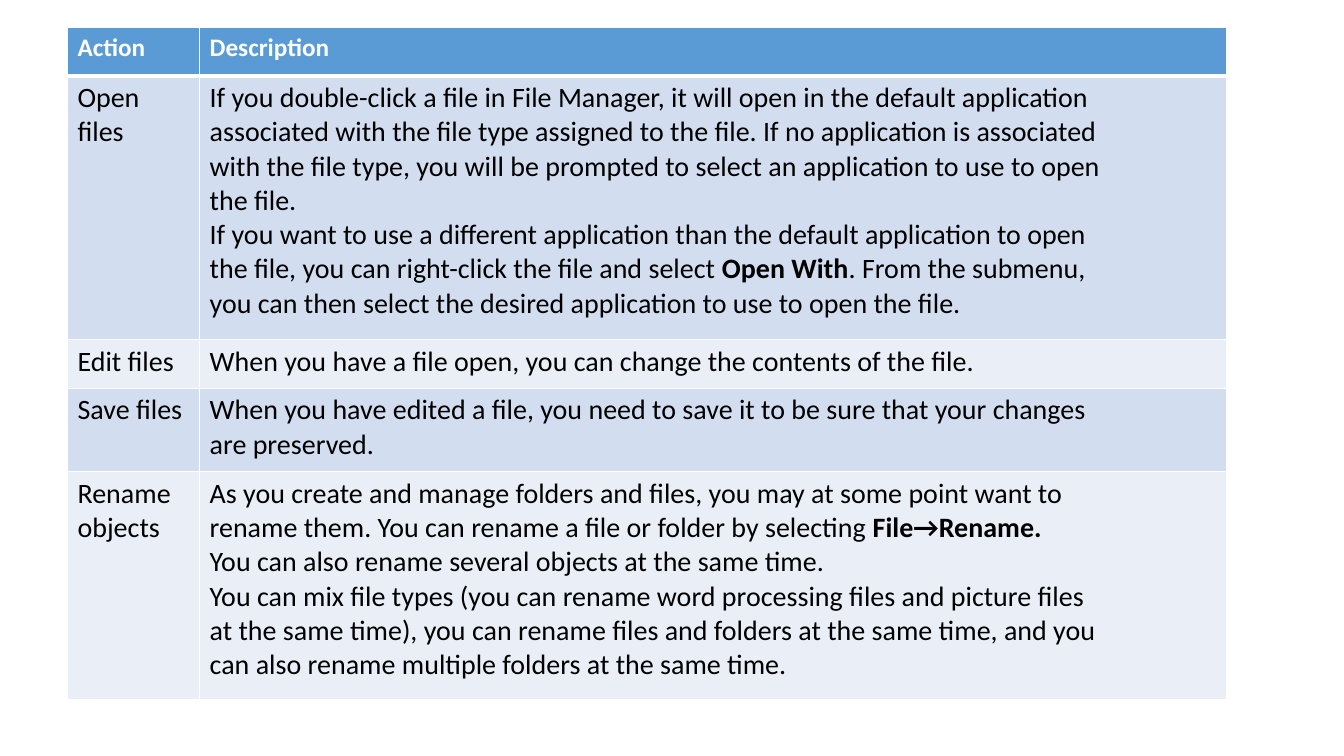
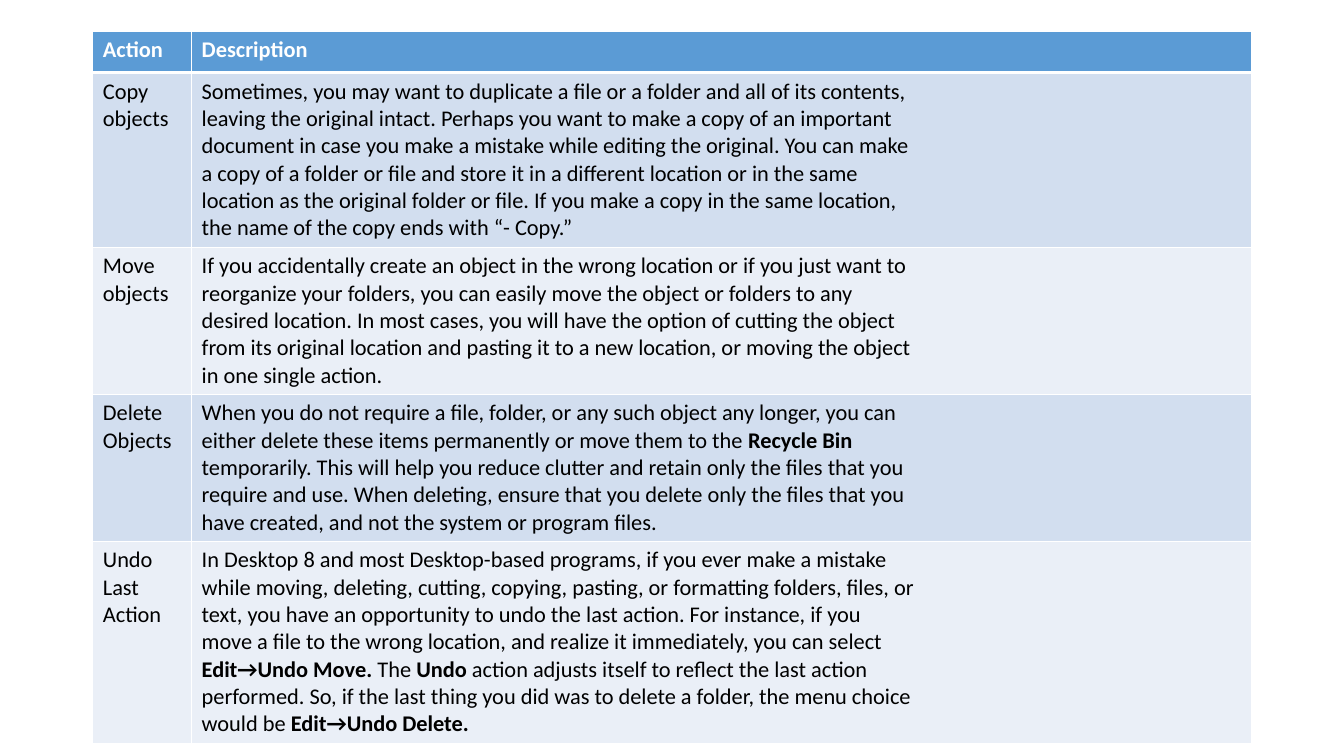
from lxml import etree
from pptx import Presentation
from pptx import util as u
from pptx.dml.color import RGBColor
from pptx.oxml import ns

FONT = "Calibri"
WHITE, BLACK, BLUE = "FFFFFF", "000000", "5B9BD5"
BANDS = "D2DEEF", "EAEFF7"
HEAD = "Action", "Description"

# Each line is a paragraph; ** switches bold on and off.
FILES = [
    ("Open files", """\
If you double-click a file in File Manager, it will open in the default application
associated with the file type assigned to the file. If no application is associated
with the file type, you will be prompted to select an application to use to open
the file.
If you want to use a different application than the default application to open
the file, you can right-click the file and select **Open With**. From the submenu,
you can then select the desired application to use to open the file."""),
    ("Edit files",
     "When you have a file open, you can change the contents of the file."),
    ("Save files", """\
When you have edited a file, you need to save it to be sure that your changes
are preserved."""),
    ("Rename objects", """\
As you create and manage folders and files, you may at some point want to
rename them. You can rename a file or folder by selecting **File→Rename.**
You can also rename several objects at the same time.
You can mix file types (you can rename word processing files and picture files
at the same time), you can rename files and folders at the same time, and you
can also rename multiple folders at the same time."""),
]

OBJECTS = [
    ("Copy objects", """\
Sometimes, you may want to duplicate a file or a folder and all of its contents,
leaving the original intact. Perhaps you want to make a copy of an important
document in case you make a mistake while editing the original. You can make
a copy of a folder or file and store it in a different location or in the same
location as the original folder or file. If you make a copy in the same location,
the name of the copy ends with “- Copy.”"""),
    ("Move objects", """\
If you accidentally create an object in the wrong location or if you just want to
reorganize your folders, you can easily move the object or folders to any
desired location. In most cases, you will have the option of cutting the object
from its original location and pasting it to a new location, or moving the object
in one single action."""),
    ("Delete Objects", """\
When you do not require a file, folder, or any such object any longer, you can
either delete these items permanently or move them to the **Recycle Bin**
temporarily. This will help you reduce clutter and retain only the files that you
require and use. When deleting, ensure that you delete only the files that you
have created, and not the system or program files."""),
    ("Undo Last Action", """\
In Desktop 8 and most Desktop-based programs, if you ever make a mistake
while moving, deleting, cutting, copying, pasting, or formatting folders, files, or
text, you have an opportunity to undo the last action. For instance, if you
move a file to the wrong location, and realize it immediately, you can select
**Edit→Undo Move. **The **Undo **action adjusts itself to reflect the last action
performed. So, if the last thing you did was to delete a folder, the menu choice
would be **Edit→Undo Delete.**"""),
]


def color(code):
    return RGBColor.from_string(code)


def write(frame, text, size, ink=BLACK, bold=False):
    for i, line in enumerate(text.split("\n")):
        para = frame.add_paragraph() if i else frame.paragraphs[0]
        for j, part in enumerate(line.split("**")):
            if not part:
                continue
            run = para.add_run()
            run.text = part
            font = run.font
            font.name, font.size = FONT, u.Pt(size)
            font.bold = bold or j % 2 == 1
            font.color.rgb = color(ink)


def border(cell, top=1, bottom=1):
    """Draw white cell edges; widths are in points."""
    props = cell._tc.get_or_add_tcPr()
    for side, width in zip("LRTB", (1, 1, top, bottom)):
        edge = etree.SubElement(props, ns.qn("a:ln" + side), w=str(u.Pt(width)))
        fill = etree.SubElement(edge, ns.qn("a:solidFill"))
        etree.SubElement(fill, ns.qn("a:srgbClr"), val=WHITE)


def paint(cell, code):
    cell.fill.solid()
    cell.fill.fore_color.rgb = color(code)


def table(slide, items, left, top, cols, rows, head, body):
    """Add a banded table; head and body are text sizes."""
    data = [HEAD, *items]
    grid = slide.shapes.add_table(
        len(data), len(cols), u.Cm(left), u.Cm(top),
        u.Cm(sum(cols)), u.Cm(sum(rows))).table
    grid.horz_banding = grid.first_row = False
    for col, width in zip(grid.columns, cols):
        col.width = u.Cm(width)
    for r, (row, texts) in enumerate(zip(grid.rows, data)):
        row.height = u.Cm(rows[r])
        for cell, text in zip(row.cells, texts):
            border(cell, top=3 if r == 1 else 1, bottom=1 if r else 3)
            if r:
                paint(cell, BANDS[(r - 1) % 2])
                write(cell.text_frame, text, body)
            else:
                paint(cell, BLUE)
                write(cell.text_frame, text, head, ink=WHITE, bold=True)


def main():
    deck = Presentation()
    deck.slide_width, deck.slide_height = u.Cm(33.87), u.Cm(19.05)
    blank = deck.slide_layouts[6]
    table(deck.slides.add_slide(blank), FILES, 1.7, 0.69,
          cols=(3.33, 25.88), rows=(1.22, 6.65, 1.22, 2.1, 5.74),
          head=18, body=20)
    table(deck.slides.add_slide(blank), OBJECTS, 2.34, 0.79,
          cols=(2.49, 26.72), rows=(1.04, 4.4, 3.7, 3.7, 5.08),
          head=16, body=16)
    deck.save("out.pptx")


if __name__ == "__main__":
    main()
